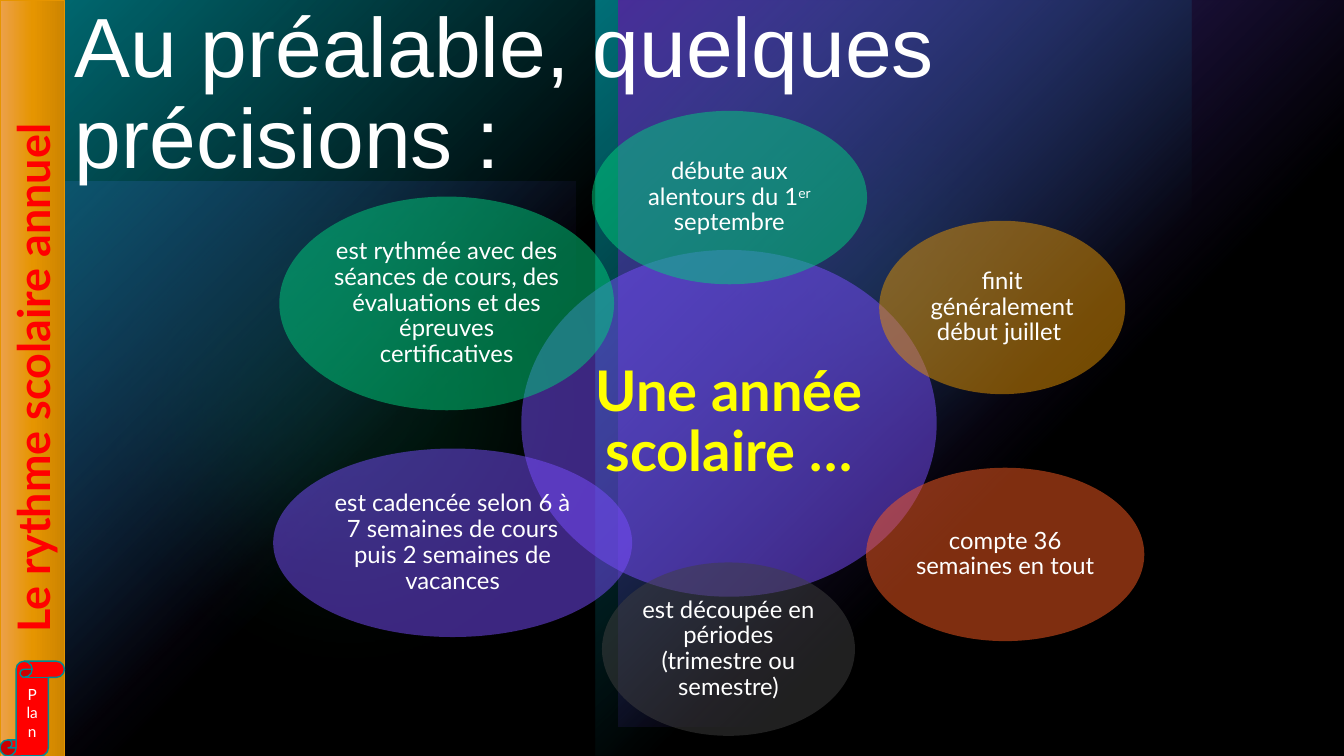
from dataclasses import dataclass

from pptx import Presentation
from pptx.dml.color import RGBColor
from pptx.enum.shapes import MSO_SHAPE as Shape
from pptx.enum.text import MSO_ANCHOR as Anchor, MSO_AUTO_SIZE as AutoSize, PP_ALIGN as Align
from pptx.oxml import parse_xml
from pptx.oxml.ns import nsdecls, qn
from pptx.util import Pt

PX = 9144  # one hundred px to the inch


@dataclass(frozen=True)
class Theme:
    black: str = "000000"
    white: str = "FFFFFF"
    yellow: str = "FFFF00"
    red: str = "FF0000"
    purple: str = "794DFF"
    green: str = "00D17D"
    teal: str = "00BAC8"
    dark_teal: str = "008A94"
    amber: str = "E69500"
    light_amber: str = "ECA14B"
    dark_amber: str = "CC8400"
    orange: str = "FE5D21"
    gray: str = "404040"
    title_font: str = "Arial"
    body_font: str = "Lato"
    title_size: int = 60
    center_size: int = 40
    banner_size: int = 32
    bubble_size: int = 17
    scroll_size: int = 11


THEME = Theme()

# left, top, width, height, turn, flips, colour, opacity at the bright corner
GLOWS_BEHIND = [(0, 180, 571, 571, 0, "V", THEME.purple, 60)]
GLOWS_ABOVE = [
    (0, 0, 591, 750, 180, "V", THEME.teal, 100),
    (591, 0, 591, 750, 180, "HV", THEME.teal, 100),
    (613, 0, 721, 721, 180, "V", THEME.purple, 100),
]
HALOS = [((629, 43, 472, 472), 60), ((0, 56, 694, 694), 20)]

# Text between carets is set as superscript
BUBBLES = [
    ((587, 110, 273, 172), THEME.green, "débute aux alentours du 1^er^ septembre"),
    ((872, 219, 244, 172), THEME.amber, "finit généralement début juillet "),
    ((859, 464, 276, 172), THEME.orange, "compte 36 semaines en tout"),
    ((597, 558, 251, 172), THEME.gray, "est découpée en périodes (trimestre ou semestre)"),
    ((271, 445, 356, 187), THEME.purple,
     "est cadencée selon 6 à 7 semaines de cours puis 2 semaines de vacances"),
    ((277, 195, 332, 212), THEME.green,
     "est rythmée avec des séances de cours, des évaluations et des épreuves certificatives"),
]


def rgb(color):
    return RGBColor.from_string(color)


def place(shape, box):
    shape.left, shape.top, shape.width, shape.height = (length * PX for length in box)


def add_plain_shape(shapes, kind, box, color, opacity=100):
    shape = shapes.add_shape(kind, *(length * PX for length in box))
    shape.shadow.inherit = False
    shape.fill.solid()
    shape.fill.fore_color.rgb = rgb(color)
    if opacity < 100:
        color_element = shape._element.spPr.find(f".//{qn('a:srgbClr')}")
        color_element.append(parse_xml(f'<a:alpha {nsdecls("a")} val="{opacity * 1000}"/>'))
    shape.line.fill.background()
    return shape


def set_gradient(shape, stops, direction):
    """Fill with (position, colour, opacity) stops; direction is a DrawingML element."""
    stop_xml = "".join(
        f'<a:gs pos="{position * 1000}"><a:srgbClr val="{color}">'
        f'<a:alpha val="{opacity * 1000}"/></a:srgbClr></a:gs>'
        for position, color, opacity in stops
    )
    gradient = parse_xml(
        f'<a:gradFill {nsdecls("a")} rotWithShape="1">'
        f"<a:gsLst>{stop_xml}</a:gsLst>{direction}</a:gradFill>"
    )
    properties = shape._element.spPr
    properties.replace(properties.find(qn("a:solidFill")), gradient)


def add_glow(shapes, left, top, width, height, turn, flips, color, opacity):
    """Add a rectangle that fades out from one corner."""
    glow = add_plain_shape(shapes, Shape.RECTANGLE, (left, top, width, height), color)
    glow.rotation = turn
    for axis in flips:
        glow._element.spPr.find(qn("a:xfrm")).set(f"flip{axis}", "1")
    set_gradient(
        glow,
        [(0, color, opacity), (60, color, 0)],
        '<a:path path="circle"><a:fillToRect r="100000" b="100000"/></a:path>',
    )


def add_halo(shapes, box, opacity):
    """Add an ellipse with a wide soft edge."""
    halo = add_plain_shape(shapes, Shape.OVAL, box, THEME.green, opacity)
    halo._element.spPr.find(qn("a:effectLst")).append(
        parse_xml(f'<a:softEdge {nsdecls("a")} rad="1270000"/>')
    )


def add_backdrop(slide):
    slide.background.fill.solid()
    slide.background.fill.fore_color.rgb = rgb(THEME.black)
    shapes = slide.shapes.add_group_shape().shapes
    for glow in GLOWS_BEHIND:
        add_glow(shapes, *glow)
    for box, opacity in HALOS:
        add_halo(shapes, box, opacity)
    for glow in GLOWS_ABOVE:
        add_glow(shapes, *glow)
    add_plain_shape(slide.shapes, Shape.RECTANGLE, (0, 0, 1333, 750), THEME.black, 40)


def write(shape, text, size, color, font=THEME.body_font, bold=False,
          align=Align.CENTER, anchor=Anchor.MIDDLE, line_spacing=None, inset=None):
    frame = shape.text_frame
    frame.word_wrap = True
    frame.auto_size = AutoSize.NONE
    frame.vertical_anchor = anchor
    if inset is not None:
        frame.margin_left = frame.margin_right = inset * PX
        frame.margin_top = frame.margin_bottom = inset * PX
    paragraph = frame.paragraphs[0]
    paragraph.alignment = align
    paragraph.line_spacing = line_spacing
    for index, part in enumerate(text.split("^")):
        run = paragraph.add_run()
        run.text = part
        run.font.name = font
        run.font.size = Pt(size)
        run.font.bold = bold
        run.font.color.rgb = rgb(color)
        if index % 2:
            run.font._element.set("baseline", "30000")


def add_title(slide, text):
    title = slide.shapes.title
    place(title, (64, 0, 1214, 110))
    slide.shapes._spTree.append(title._element)
    write(title, text, THEME.title_size, THEME.white, font=THEME.title_font,
          align=Align.LEFT, anchor=Anchor.TOP, line_spacing=0.9)


def add_banner(slide, text):
    banner = add_plain_shape(slide.shapes, Shape.RECTANGLE, (-343, 343, 750, 64), THEME.amber)
    banner.rotation = 270
    set_gradient(
        banner,
        [(0, THEME.light_amber, 100), (50, THEME.amber, 100), (100, THEME.dark_amber, 100)],
        '<a:lin ang="5400000" scaled="0"/>',
    )
    banner.line.color.rgb = rgb(THEME.amber)
    banner.line.width = Pt(0.5)
    write(banner, text, THEME.banner_size, THEME.red, bold=True)


def add_bubble_diagram(slide, center_text):
    shapes = slide.shapes.add_group_shape().shapes
    center = add_plain_shape(shapes, Shape.OVAL, (517, 248, 412, 344), THEME.purple, 50)
    write(center, center_text, THEME.center_size, THEME.yellow, bold=True,
          line_spacing=0.9, inset=6)
    for box, color, text in BUBBLES:
        bubble = add_plain_shape(shapes, Shape.OVAL, box, color, 50)
        write(bubble, text, THEME.bubble_size, THEME.white, line_spacing=0.9, inset=2)


def add_scroll(slide, text):
    scroll = add_plain_shape(slide.shapes, Shape.VERTICAL_SCROLL, (0, 656, 64, 94), THEME.red)
    scroll.adjustments[0] = 0.25
    scroll.line.color.rgb = rgb(THEME.dark_teal)
    scroll.line.width = Pt(1)
    write(scroll, text, THEME.scroll_size, THEME.white)


def main():
    presentation = Presentation()
    presentation.slide_width = 1333 * PX
    presentation.slide_height = 750 * PX
    slide = presentation.slides.add_slide(presentation.slide_layouts.get_by_name("Title Only"))
    add_backdrop(slide)
    add_title(slide, "Au préalable, quelques précisions :")
    add_banner(slide, "Le rythme scolaire annuel")
    add_bubble_diagram(slide, "Une année scolaire …")
    add_scroll(slide, "Plan")
    presentation.save("out.pptx")


if __name__ == "__main__":
    main()
